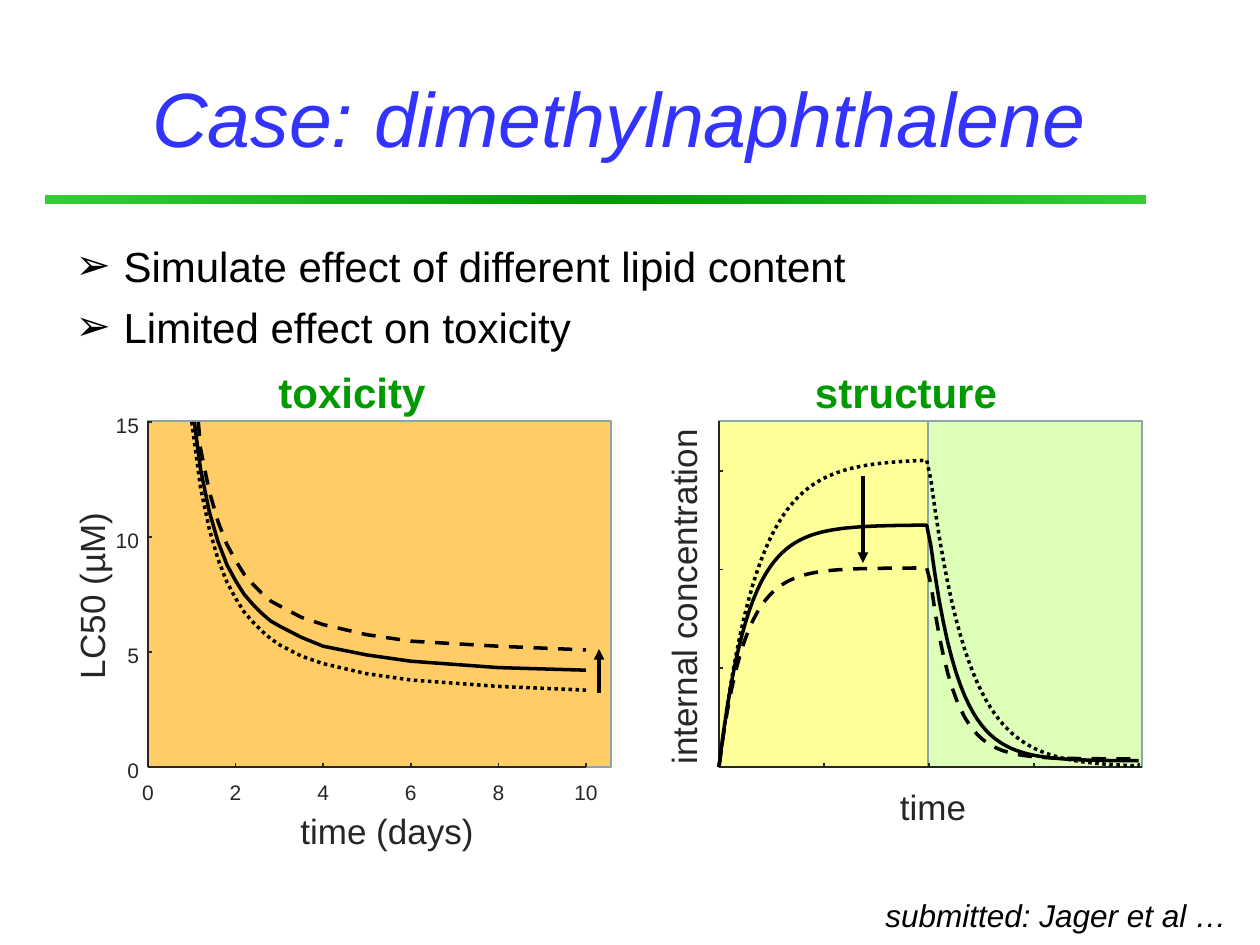
from math import exp

from lxml.etree import SubElement
from pptx import Presentation
from pptx.dml.color import RGBColor
from pptx.enum.dml import MSO_LINE_DASH_STYLE as Dash
from pptx.enum.shapes import MSO_CONNECTOR, MSO_SHAPE
from pptx.enum.text import MSO_ANCHOR, MSO_AUTO_SIZE, PP_ALIGN
from pptx.oxml.ns import qn
from pptx.util import Pt

# Content
TITLE = "Case: dimethylnaphthalene "
BULLETS = ["Simulate effect of different lipid content", "Limited effect on toxicity"]
CITATION = "submitted: Jager et al …"
COLORS = {
    "title": "3333FF", "text": "000000", "heading": "009900", "axis": "262626",
    "rule_light": "33CC33", "rule_dark": "009900", "border": "8AA6A8",
    "orange": "FFCC66", "yellow": "FFFF99", "green": "DEFFB7",
}

# LC50 in µM by exposure day; each curve enters the plot at 15 µM on its first day
DAYS = [1.2, 1.4, 1.6, 1.8, 2, 2.2, 2.4, 2.6, 2.8, 3, 3.5, 4, 5, 6, 8, 10]
LC50_CURVES = [
    (Dash.SOLID, 1.06, [12.97, 11.11, 9.8, 8.81, 8.1, 7.5, 7.06, 6.68,
                        6.35, 6.13, 5.64, 5.25, 4.87, 4.6, 4.32, 4.21]),
    (Dash.ROUND_DOT, 1, [12.15, 10.34, 9.03, 8.05, 7.33, 6.73, 6.29, 5.91,
                         5.58, 5.31, 4.82, 4.49, 4.05, 3.78, 3.5, 3.34]),
    (Dash.DASH, 1.15, [13.85, 11.99, 10.67, 9.69, 8.98, 8.37, 7.94, 7.55,
                       7.22, 7.01, 6.51, 6.19, 5.75, 5.47, 5.25, 5.09]),
]
# Uptake then elimination: dash, plateau, uptake rate, drop start, floor, loss rate
UPTAKE_CURVES = [
    (Dash.SOLID, 242, 0.145, 221, 6, 0.15),
    (Dash.ROUND_DOT, 308, 0.112, 287, 0, 0.112),
    (Dash.DASH, 199, 0.166, 183, 8, 0.18),
]
UPTAKE_STEPS, ALL_STEPS, STEP_WIDTH = 50, 100, 4.24

# Plot geometry in px
PLOT_TOP, BASE = 421, 767
TOX_LEFT, DAY_WIDTH, UM_HEIGHT = 148, 43.8, 23
STRUCT_LEFT, STRUCT_TICK_X, STRUCT_TICK_Y = 719, 105, 98.67
TICK = 4
SCALE = 914400 / 126


def px(value):
    return round(value * SCALE)


def color(name):
    return RGBColor.from_string(COLORS[name])


def format_runs(paragraph, size, color_name, bold=False, italic=False):
    for run in paragraph.runs:
        font = run.font
        font.name, font.size = "Arial", Pt(size)
        font.bold, font.italic = bold, italic
        font.color.rgb = color(color_name)


def add_label(shapes, text, center_x, center_y, size, color_name="axis", width=360,
              rotation=0, align=PP_ALIGN.CENTER, **style):
    height = size * 2.4
    box = shapes.add_textbox(px(center_x - width / 2), px(center_y - height / 2),
                             px(width), px(height))
    box.rotation = rotation
    frame = box.text_frame
    frame.margin_left = frame.margin_right = frame.margin_top = frame.margin_bottom = 0
    frame.vertical_anchor = MSO_ANCHOR.MIDDLE
    frame.word_wrap = True
    frame.text = text
    frame.paragraphs[0].alignment = align
    format_runs(frame.paragraphs[0], size, color_name, **style)


def add_rectangle(shapes, left, top, width, height):
    shape = shapes.add_shape(MSO_SHAPE.RECTANGLE, px(left), px(top), px(width), px(height))
    shape.shadow.inherit = False
    return shape


def add_panel(shapes, left, right, fill):
    panel = add_rectangle(shapes, left, PLOT_TOP, right - left, BASE - PLOT_TOP)
    panel.fill.solid()
    panel.fill.fore_color.rgb = color(fill)
    panel.line.color.rgb = color("border")
    panel.line.width = Pt(1)


def add_line(shapes, x1, y1, x2, y2, color_name="axis", width=1, arrow=False):
    line = shapes.add_connector(MSO_CONNECTOR.STRAIGHT, px(x1), px(y1), px(x2), px(y2))
    line.line.color.rgb = color(color_name)
    line.line.width = Pt(width)
    if arrow:
        SubElement(line.line._get_or_add_ln(), qn("a:tailEnd"), type="triangle")
    SubElement(line._element.spPr, qn("a:effectLst"))


def add_axes(shapes, left, right, x_ticks, y_ticks):
    add_line(shapes, left, BASE, right, BASE)
    add_line(shapes, left, BASE, left, PLOT_TOP)
    for x in x_ticks:
        add_line(shapes, x, BASE, x, BASE - TICK)
    for y in y_ticks:
        add_line(shapes, left, y, left + TICK, y)


def add_curve(shapes, points, dash):
    points = [(px(x), px(y)) for x, y in points]
    builder = shapes.build_freeform(*points[0])
    builder.add_line_segments(points[1:], close=False)
    curve = builder.convert_to_shape()
    curve.shadow.inherit = False
    curve.fill.background()
    curve.line.color.rgb = color("text")
    curve.line.width = Pt(2)
    curve.line.dash_style = dash


def place(shape, left, top, width, height):
    shape.left, shape.top, shape.width, shape.height = map(px, (left, top, width, height))
    shape.text_frame.auto_size = MSO_AUTO_SIZE.NONE


def uptake_height(step, plateau, uptake, drop, floor, loss):
    if step < UPTAKE_STEPS:
        return plateau * (1 - exp(-uptake * step))
    return floor + (drop - floor) * exp(-loss * (step - UPTAKE_STEPS))


presentation = Presentation()
presentation.slide_width, presentation.slide_height = px(1260), px(945)
slide = presentation.slides.add_slide(presentation.slide_layouts[1])

# Title and green rule
title, body = slide.placeholders
place(title, 63, 38, 1134, 157)
title.text_frame.text = TITLE
title.text_frame.vertical_anchor = MSO_ANCHOR.MIDDLE
format_runs(title.text_frame.paragraphs[0], 44, "title", italic=True)

rule = add_rectangle(slide.shapes, 45, 195, 1101, 9)
rule.line.fill.background()
rule.fill.gradient()
rule.fill.gradient_angle = 0
stops = rule.fill._fill._gradFill.gsLst
for stop in list(stops):
    stops.remove(stop)
for position, name in ((0, "rule_light"), (50, "rule_dark"), (100, "rule_light")):
    stop = SubElement(stops, qn("a:gs"), pos=str(position * 1000))
    SubElement(stop, qn("a:srgbClr"), val=COLORS[name])

# Bullets
place(body, 63, 234, 1134, 300)
body.text_frame.text = "\n".join(BULLETS)
for paragraph in body.text_frame.paragraphs:
    paragraph.space_before = Pt(6)
    format_runs(paragraph, 24, "text")
    properties = paragraph._p.get_or_add_pPr()
    properties.set("marL", str(px(48)))
    properties.set("indent", str(px(-48)))
    SubElement(properties, qn("a:buFont"), typeface="Arial")
    SubElement(properties, qn("a:buChar"), char="➢")

# Structure plot
structure = slide.shapes.add_group_shape().shapes
add_panel(structure, 928, 1142, "green")
add_panel(structure, STRUCT_LEFT, 928, "yellow")
add_axes(structure, STRUCT_LEFT, 1142,
         [STRUCT_LEFT + i * STRUCT_TICK_X for i in range(5)],
         [BASE - i * STRUCT_TICK_Y for i in range(4)])
for dash, *parameters in UPTAKE_CURVES:
    add_curve(structure, [(STRUCT_LEFT + i * STRUCT_WIDTH, BASE - uptake_height(i, *parameters))
                          for STRUCT_WIDTH in [STEP_WIDTH] for i in range(ALL_STEPS)], dash)
add_line(structure, 863, 476, 863, 563, "text", 2, arrow=True)
add_label(structure, "structure", 906, 392, 24, "heading", bold=True)
add_label(structure, "time", 933, 807, 20)
add_label(structure, "internal concentration", 683, 597, 20, rotation=270)

# Toxicity plot
toxicity = slide.shapes.add_group_shape().shapes
add_panel(toxicity, TOX_LEFT, 611, "orange")
day_ticks = {day: TOX_LEFT + day * DAY_WIDTH for day in range(0, 11, 2)}
lc50_ticks = {value: BASE - value * UM_HEIGHT for value in range(0, 16, 5)}
add_axes(toxicity, TOX_LEFT, 586, day_ticks.values(), lc50_ticks.values())
for day, x in day_ticks.items():
    add_label(toxicity, str(day), x, 792, 12, width=40)
for value, y in lc50_ticks.items():
    add_label(toxicity, str(value), 119, y + 3, 12, width=40, align=PP_ALIGN.RIGHT)
for dash, first_day, values in LC50_CURVES:
    add_curve(toxicity, [(TOX_LEFT + day * DAY_WIDTH, BASE - value * UM_HEIGHT)
                         for day, value in zip([first_day] + DAYS, [15] + values)], dash)
add_line(toxicity, 599, 693, 599, 649, "text", 2, arrow=True)
add_label(toxicity, "toxicity", 352, 392, 24, "heading", bold=True)
add_label(toxicity, "time (days)", 387, 831, 20)
add_label(toxicity, "LC50 (µM)", 91, 596, 20, rotation=270)

# Citation
add_label(slide.shapes, CITATION, 1056, 915, 18, "text", italic=True)

presentation.save("out.pptx")
